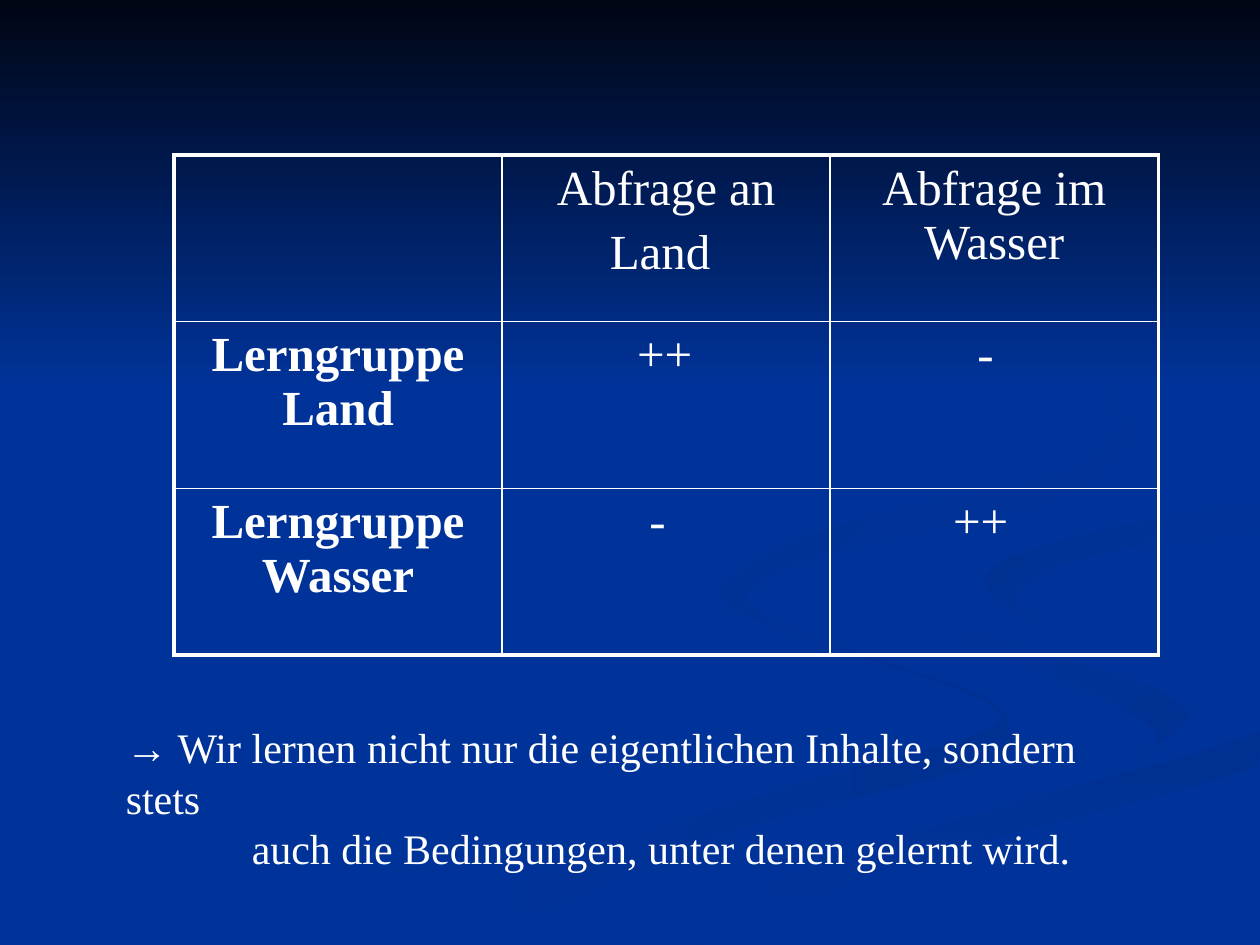
from lxml import etree
from pptx import Presentation
from pptx.dml.color import RGBColor
from pptx.enum.shapes import MSO_SHAPE
from pptx.enum.text import PP_ALIGN
from pptx.oxml.ns import qn
from pptx.util import Pt

RECTANGLE = MSO_SHAPE.RECTANGLE
CENTER, LEFT = PP_ALIGN.CENTER, PP_ALIGN.LEFT
FONT = "Times New Roman"
CURVE_STEPS = 4
COLORS = {
    "background": "003399",
    "shade": "003092",
    "night": "000514",
    "text": "FFFFFF",
    "border": "FFFFFF",
}

# Each ribbon: first colour, last colour, clockwise gradient angle, guide points.
RIBBONS = [
    ("background", "shade", 0, [
        (562, 398), (491, 374), (428, 349), (414, 330), (418, 348), (489, 374), (562, 400),
        (557, 420), (417, 460), (216, 539), (260, 539), (406, 479), (562, 436), (576, 418)]),
    ("background", "shade", 45, [
        (679, 410), (652, 389), (570, 366), (521, 334), (537, 360), (603, 386),
        (661, 418), (644, 436)]),
    ("shade", "background", 90, [
        (362, 539), (411, 539), (500, 498), (719, 438), (719, 418), (598, 453), (454, 499)]),
    ("background", "background", 0, [
        (522, 334), (558, 362), (662, 394), (670, 425), (535, 463), (343, 539), (374, 538),
        (501, 482), (719, 418), (719, 387), (588, 354), (570, 322), (719, 289), (719, 279),
        (554, 307)]),
    ("shade", "background", 45, [
        (562, 331), (595, 357), (580, 340), (618, 319), (719, 302), (719, 289), (612, 307)]),
    ("shade", "background", 45, [
        (492, 310), (594, 289), (644, 248), (607, 198), (549, 168), (609, 201), (640, 241),
        (606, 272), (487, 298), (415, 333), (448, 360), (427, 338)]),
]

# Each cell: its paragraphs and the left indent; without an indent the text is centred.
CELLS = [
    [([], None), (["Abfrage an", "Land "], None), (["Abfrage im Wasser"], None)],
    [(["Lerngruppe Land"], None), (["++"], 70), (["-"], 77)],
    [(["Lerngruppe Wasser"], None), (["-"], 77), (["++"], 63)],
]


def rgb(name):
    return RGBColor.from_string(COLORS[name])


def fill_gradient(shape, first, last, clockwise_angle):
    shape.shadow.inherit = False
    shape.line.fill.background()
    shape.fill.gradient()
    shape.fill.gradient_angle = -clockwise_angle % 360
    for stop, color in zip(shape.fill.gradient_stops, (first, last)):
        stop.color.rgb = rgb(color)


def set_font(paragraph, size, bold=False):
    font = paragraph.font
    font.name, font.size, font.bold = FONT, Pt(size), bold
    font.color.rgb = rgb("text")


def indent(paragraph, left, first_line):
    properties = paragraph._p.get_or_add_pPr()
    properties.set("marL", str(Pt(left)))
    properties.set("indent", str(Pt(first_line)))


def smooth_outline(points):
    """Closed Catmull-Rom curve through the points."""
    curve = []
    for index, start in enumerate(points):
        before = points[index - 1]
        end = points[(index + 1) % len(points)]
        after = points[(index + 2) % len(points)]
        for step in range(CURVE_STEPS):
            t = step / CURVE_STEPS
            curve.append(tuple(
                b + t / 2 * (c - a + t * (2 * a - 5 * b + 4 * c - d
                                          + t * (3 * (b - c) + d - a)))
                for a, b, c, d in zip(before, start, end, after)))
    return curve


def add_backdrop(slide, left, top, width, height):
    """Ribbons on plain blue, with a dark fade along the top of the box."""
    slide.background.fill.solid()
    slide.background.fill.fore_color.rgb = rgb("background")
    for first, last, angle, points in RIBBONS:
        outline = [(min(x, width), min(y, height)) for x, y in smooth_outline(points)]
        builder = slide.shapes.build_freeform(*outline[0], scale=Pt(1))
        builder.add_line_segments(outline[1:], close=True)
        ribbon = builder.convert_to_shape(Pt(left), Pt(top))
        fill_gradient(ribbon, first, last, angle)
    fade = slide.shapes.add_shape(RECTANGLE, Pt(left), Pt(top), Pt(width), Pt(height * 0.41))
    fill_gradient(fade, "night", "background", 90)


def set_borders(cell, widths):
    properties = cell._tc.get_or_add_tcPr()
    for position, (side, width) in enumerate(widths.items()):
        line = etree.Element(qn(f"a:{side}"), w=str(Pt(width)))
        fill = etree.SubElement(line, qn("a:solidFill"))
        etree.SubElement(fill, qn("a:srgbClr"), val=COLORS["border"])
        properties.insert(position, line)


def add_result_table(slide, left, top, width, height):
    rows, columns = len(CELLS), len(CELLS[0])
    table = slide.shapes.add_table(
        rows, columns, Pt(left), Pt(top), Pt(width), Pt(height)).table
    table.first_row = table.horz_banding = False
    for row, row_cells in enumerate(CELLS):
        for column, (lines, left_indent) in enumerate(row_cells):
            cell = table.cell(row, column)
            cell.fill.background()
            outer = {"lnL": column == 0, "lnR": column == columns - 1,
                     "lnT": row == 0, "lnB": row == rows - 1}
            set_borders(cell, {side: 2.25 if edge else 1 for side, edge in outer.items()})
            for number, line in enumerate(lines):
                frame = cell.text_frame
                paragraph = frame.add_paragraph() if number else frame.paragraphs[0]
                paragraph.text = line
                paragraph.space_before = Pt(6 if number else 0)
                paragraph.alignment = CENTER if left_indent is None else LEFT
                indent(paragraph, left_indent or 0, 0)
                set_font(paragraph, 28, bold=column == 0)


def add_conclusion(slide, left, top, width, height):
    box = slide.shapes.add_textbox(Pt(left), Pt(top), Pt(width), Pt(height))
    frame = box.text_frame
    frame.word_wrap = True
    frame.text = ("→ Wir lernen nicht nur die eigentlichen Inhalte, sondern stets\n"
                  "auch die Bedingungen, unter denen gelernt wird.")
    for paragraph in frame.paragraphs:
        set_font(paragraph, 24)
    indent(frame.paragraphs[1], 0, 72)


def main():
    presentation = Presentation()
    presentation.slide_width, presentation.slide_height = Pt(720), Pt(540)
    slide = presentation.slides.add_slide(presentation.slide_layouts[6])
    add_backdrop(slide, 0, 0, 720, 540)
    add_result_table(slide, 99.4, 88.6, 562.5, 285.75)
    add_conclusion(slide, 64.8, 409, 595.4, 64.8)
    presentation.save("out.pptx")


if __name__ == "__main__":
    main()
